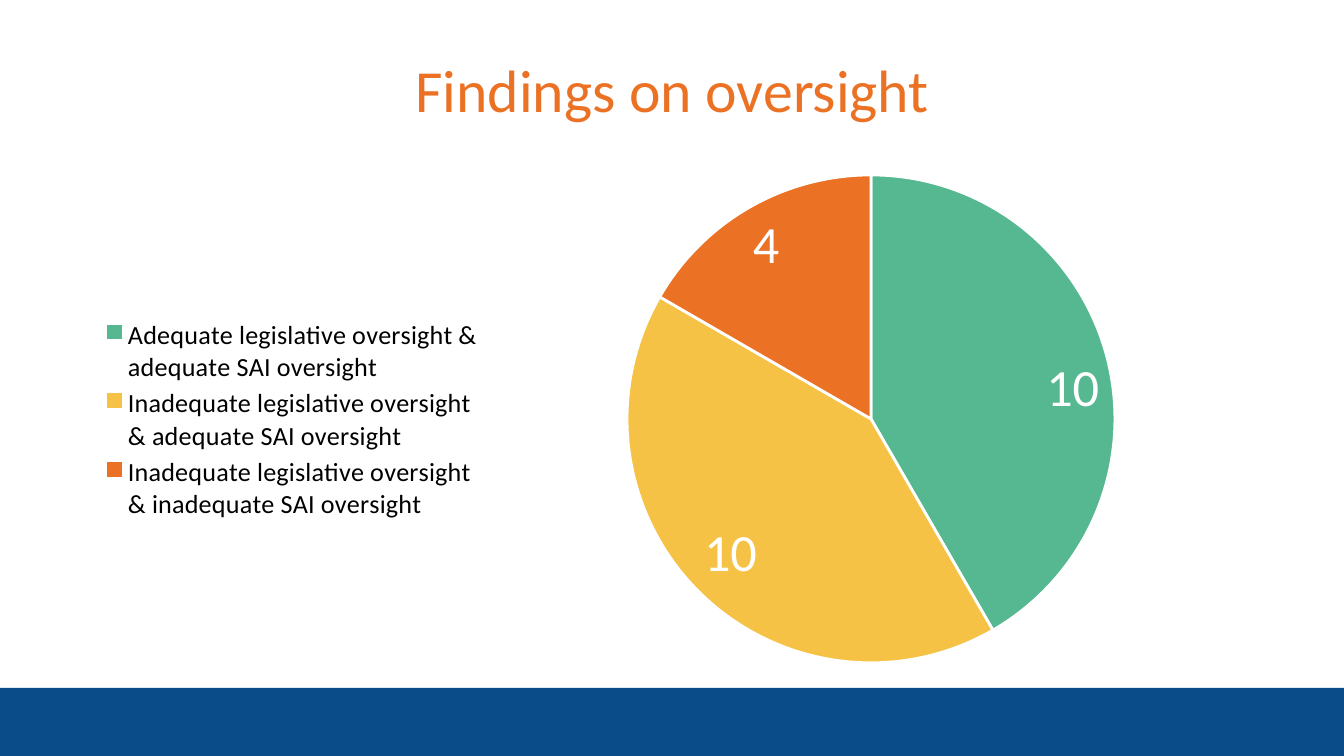
import dataclasses
import typing

import lxml.etree
import pptx
import pptx.chart.data
import pptx.dml.color
import pptx.enum.chart
import pptx.enum.shapes
import pptx.enum.text
import pptx.oxml.ns
import pptx.util

EMU_PER_PX = 914400 / 134.4
FONT_NAME = "Calibri"

WHITE = pptx.dml.color.RGBColor(0xFF, 0xFF, 0xFF)
BLACK = pptx.dml.color.RGBColor(0x00, 0x00, 0x00)
BLUE = pptx.dml.color.RGBColor(0x09, 0x4C, 0x89)
GREEN = pptx.dml.color.RGBColor(0x56, 0xB8, 0x90)
YELLOW = pptx.dml.color.RGBColor(0xF5, 0xC2, 0x45)
ORANGE = pptx.dml.color.RGBColor(0xEB, 0x72, 0x25)


@dataclasses.dataclass(frozen=True)
class Box:
    left: int
    top: int
    width: int
    height: int

    def emu(self) -> list[int]:
        return [px(value) for value in dataclasses.astuple(self)]


@dataclasses.dataclass(frozen=True)
class Finding:
    label: str
    count: int
    color: pptx.dml.color.RGBColor


SLIDE = Box(0, 0, 1344, 756)
FOOTER = Box(0, 688, 1344, 68)
TITLE = Box(151, 46, 1043, 86)
CHART = Box(84, 156, 1177, 527)
PIE = Box(627, 175, 488, 488)
LEGEND = Box(98, 315, 388, 210)

FINDINGS = [
    Finding("Adequate legislative oversight & adequate SAI oversight", 10, GREEN),
    Finding("Inadequate legislative oversight & adequate SAI oversight", 10, YELLOW),
    Finding("Inadequate legislative oversight & inadequate SAI oversight", 4, ORANGE),
]


def px(value: int) -> int:
    return round(value * EMU_PER_PX)


def format_font(font: typing.Any, size: int, color: pptx.dml.color.RGBColor) -> None:
    values = {"name": FONT_NAME, "size": pptx.util.Pt(size), "bold": False}
    for name, value in values.items():
        setattr(font, name, value)
    font.color.rgb = color


def draw_footer(slide: typing.Any) -> None:
    shape = slide.shapes.add_shape(
        pptx.enum.shapes.MSO_SHAPE.RECTANGLE, *FOOTER.emu())
    shape.shadow.inherit = False
    shape.fill.solid()
    shape.fill.fore_color.rgb = BLUE
    shape.line.fill.background()


def draw_title(slide: typing.Any, text: str) -> None:
    frame = slide.shapes.add_textbox(*TITLE.emu()).text_frame
    values = {
        "word_wrap": True,
        "vertical_anchor": pptx.enum.text.MSO_ANCHOR.MIDDLE,
    }
    for name, value in values.items():
        setattr(frame, name, value)
    paragraph = frame.paragraphs[0]
    paragraph.text = text
    paragraph.alignment = pptx.enum.text.PP_ALIGN.CENTER
    format_font(paragraph.font, 32, ORANGE)


def place_in_chart(parent: typing.Any, index: int, box: Box, inner: bool) -> None:
    """Give a chart part a manual layout, as fractions of the chart area."""
    qn = pptx.oxml.ns.qn
    for old_layout in parent.findall(qn("c:layout")):
        parent.remove(old_layout)
    layout = lxml.etree.Element(qn("c:layout"))
    manual = lxml.etree.SubElement(layout, qn("c:manualLayout"))
    values = {"layoutTarget": "inner"} if inner else {}
    values |= {
        "xMode": "edge",
        "yMode": "edge",
        "x": (box.left - CHART.left) / CHART.width,
        "y": (box.top - CHART.top) / CHART.height,
        "w": box.width / CHART.width,
        "h": box.height / CHART.height,
    }
    for name, value in values.items():
        lxml.etree.SubElement(manual, qn(f"c:{name}")).set("val", str(value))
    parent.insert(index, layout)


def draw_pie(slide: typing.Any, findings: list[Finding]) -> None:
    data = pptx.chart.data.CategoryChartData()
    data.categories = [finding.label for finding in findings]
    data.add_series("Series 1", [finding.count for finding in findings])
    chart = slide.shapes.add_chart(
        pptx.enum.chart.XL_CHART_TYPE.PIE, *CHART.emu(), data).chart
    chart.has_title = False
    format_font(chart.font, 10, BLUE)

    # Slices
    plot = chart.plots[0]
    for index, finding in enumerate(findings):
        point_format = plot.series[0].points[index].format
        point_format.fill.solid()
        point_format.fill.fore_color.rgb = finding.color
        point_format.line.color.rgb = WHITE
        point_format.line.width = pptx.util.Pt(1.5)

    # Value labels
    labels = plot.series[0].data_labels
    values = {
        "show_value": True,
        "show_percentage": False,
        "position": pptx.enum.chart.XL_LABEL_POSITION.INSIDE_END,
    }
    for name, value in values.items():
        setattr(labels, name, value)
    format_font(labels.font, 28, WHITE)

    # Legend
    chart.has_legend = True
    chart.legend.position = pptx.enum.chart.XL_LEGEND_POSITION.LEFT
    chart.legend.include_in_layout = False
    format_font(chart.legend.font, 14, BLACK)

    # Places of the pie and the legend
    plot_area = chart.element.find(".//" + pptx.oxml.ns.qn("c:plotArea"))
    legend = chart.element.find(".//" + pptx.oxml.ns.qn("c:legend"))
    place_in_chart(plot_area, 0, PIE, inner=True)
    place_in_chart(legend, 1, LEGEND, inner=False)


def main() -> None:
    presentation = pptx.Presentation()
    presentation.slide_width = px(SLIDE.width)
    presentation.slide_height = px(SLIDE.height)
    slide = presentation.slides.add_slide(presentation.slide_layouts[6])
    draw_footer(slide)
    draw_title(slide, "Findings on oversight")
    draw_pie(slide, FINDINGS)
    presentation.save("out.pptx")


if __name__ == "__main__":
    main()
